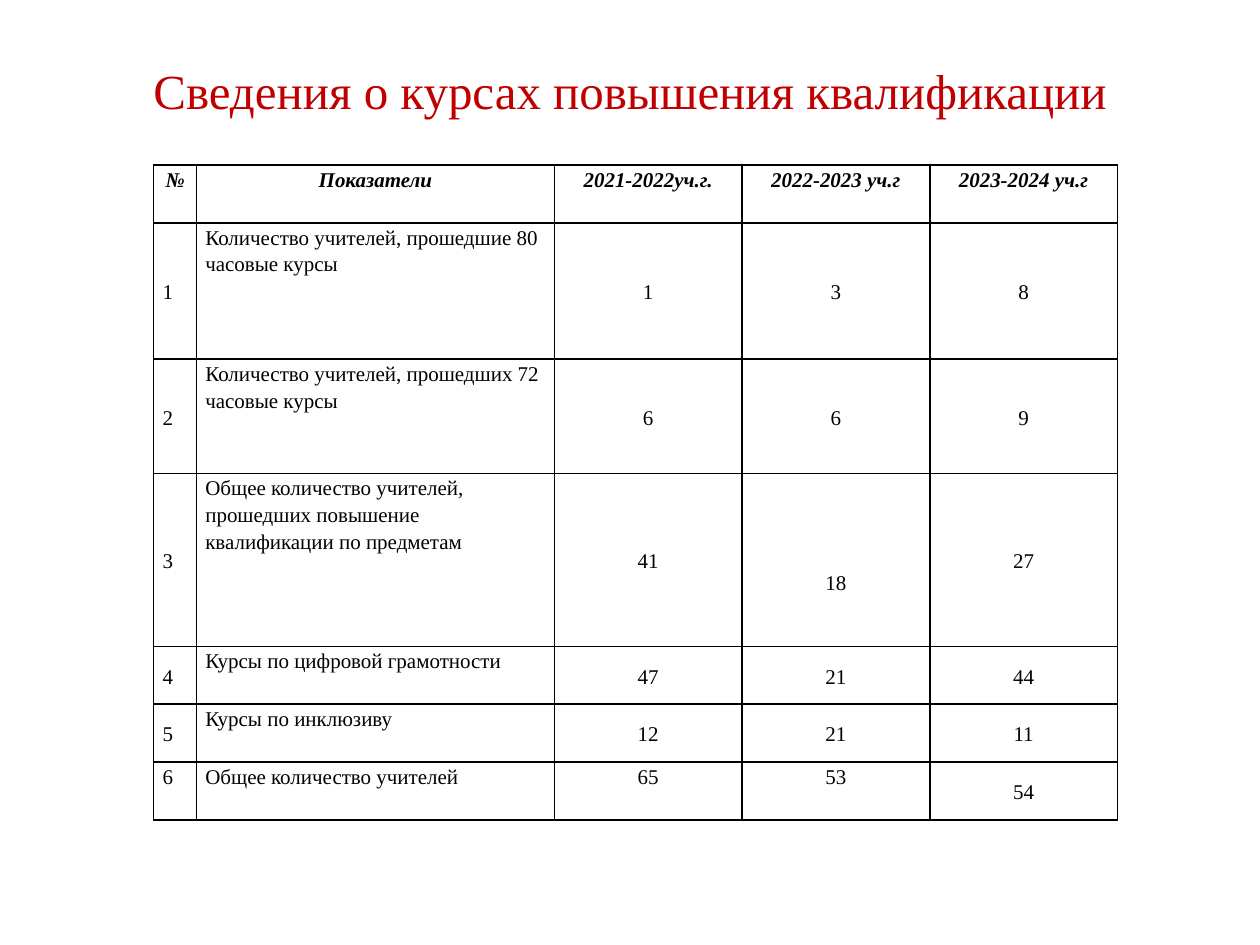
from lxml.etree import SubElement
from pptx import Presentation
from pptx.dml.color import RGBColor
from pptx.enum.text import MSO_ANCHOR as Anchor, PP_ALIGN as Align
from pptx.oxml.ns import qn
from pptx.util import Inches, Pt

FONT = "Times New Roman"
TITLE = "Сведения о курсах повышения квалификации"
HEADER = ["№", "Показатели", "2021-2022уч.г.", "2022-2023 уч.г", "2023-2024 уч.г"]
INDICATORS = [
    ("Количество учителей, прошедшие 80 часовые курсы", 1, 3, 8),
    ("Количество учителей, прошедших 72 часовые курсы", 6, 6, 9),
    ("Общее количество учителей, прошедших повышение квалификации по предметам", 41, 18, 27),
    ("Курсы по цифровой грамотности", 47, 21, 44),
    ("Курсы по инклюзиву", 12, 21, 11),
    ("Общее количество учителей", 65, 53, 54),
]
COLUMN_WIDTHS = [0.34, 2.84, 1.49, 1.49, 1.49]
ROW_HEIGHTS = [0.46, 1.08, 0.91, 1.37, 0.46, 0.46, 0.46]
COLUMN_ALIGNS = [Align.JUSTIFY, Align.LEFT] + [Align.CENTER] * 3
TOP_CELLS = {(6, 0), (6, 2), (6, 3)}  # numbers set at the top of their cell
LOWERED_CELL = (3, 3)


def add_run(paragraph, text, size, color, emphasis=False):
    run = paragraph.add_run()
    run.text = text
    font = run.font
    font.name, font.size = FONT, Pt(size)
    font.bold = font.italic = emphasis
    font.color.rgb = RGBColor.from_string(color)


def add_borders(cell, color="000000", width=1):
    properties = cell._tc.get_or_add_tcPr()
    for side in ("a:lnL", "a:lnR", "a:lnT", "a:lnB"):
        line = SubElement(properties, qn(side), w=str(Pt(width)))
        SubElement(SubElement(line, qn("a:solidFill")), qn("a:srgbClr"), val=color)


def fill_cell(cell, text, align, anchor, is_header):
    add_borders(cell)
    cell.fill.background()
    cell.margin_left = cell.margin_right = Inches(0.07)
    cell.margin_top = cell.margin_bottom = 0
    cell.vertical_anchor = anchor
    paragraph = cell.text_frame.paragraphs[0]
    paragraph.alignment = align
    paragraph.line_spacing = 1.15
    add_run(paragraph, text, 12, "000000", is_header)


presentation = Presentation()
presentation.slide_width, presentation.slide_height = Inches(10), Inches(7.5)
slide = presentation.slides.add_slide(presentation.slide_layouts[5])

title = slide.shapes.title
title.left, title.top, title.width, title.height = map(Inches, (0.5, 0.3, 9, 1.25))
title_frame = title.text_frame
title_frame.vertical_anchor = Anchor.MIDDLE
title_frame.margin_bottom = Inches(0.48)
title_frame.paragraphs[0].alignment = Align.CENTER
add_run(title_frame.paragraphs[0], TITLE, 28, "C00000")

rows = [HEADER] + [(number, *indicator) for number, indicator in enumerate(INDICATORS, 1)]
table = slide.shapes.add_table(
    len(rows), len(HEADER), Inches(1.22), Inches(1.31),
    Inches(sum(COLUMN_WIDTHS)), Inches(sum(ROW_HEIGHTS)),
).table
table.first_row = table.horz_banding = False
for column, width in zip(table.columns, COLUMN_WIDTHS):
    column.width = Inches(width)
for row, height in zip(table.rows, ROW_HEIGHTS):
    row.height = Inches(height)

for r, values in enumerate(rows):
    for c, value in enumerate(values):
        is_header = r == 0
        at_top = is_header or c == 1 or (r, c) in TOP_CELLS
        fill_cell(
            table.cell(r, c), str(value),
            Align.CENTER if is_header else COLUMN_ALIGNS[c],
            Anchor.TOP if at_top else Anchor.MIDDLE, is_header,
        )
table.cell(*LOWERED_CELL).margin_top = Inches(0.35)

presentation.save("out.pptx")
